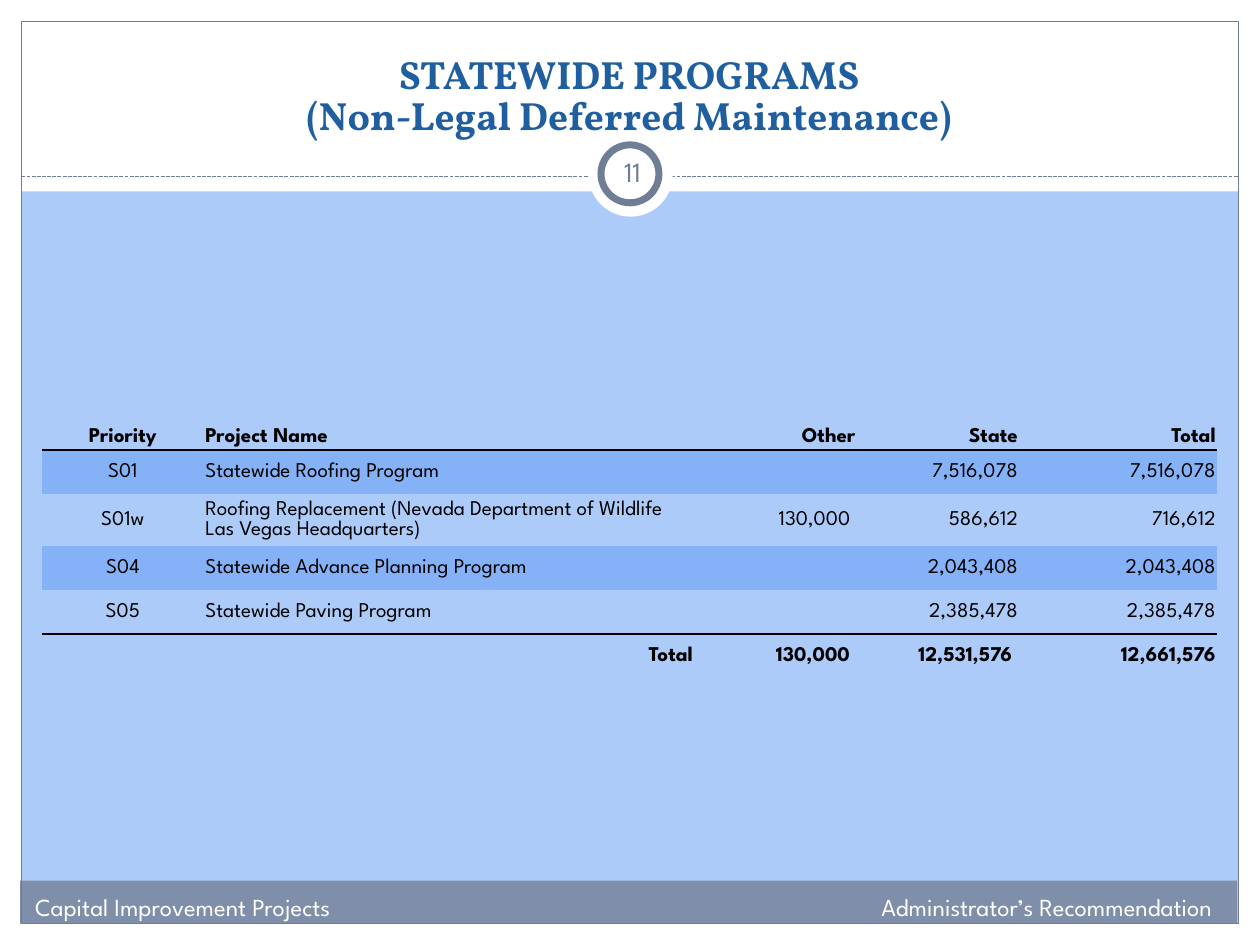
from dataclasses import dataclass
from typing import Optional

from lxml.etree import SubElement
from pptx import Presentation
from pptx.dml.color import RGBColor
from pptx.enum.dml import MSO_LINE
from pptx.enum.shapes import MSO_CONNECTOR, MSO_SHAPE
from pptx.enum.text import MSO_ANCHOR, PP_ALIGN
from pptx.oxml.ns import qn
from pptx.util import Inches, Pt

WHITE = RGBColor(0xFF, 0xFF, 0xFF)
BLACK = RGBColor(0x00, 0x00, 0x00)
SKY = RGBColor(0xAC, 0xCB, 0xF9)
BAND = RGBColor(0x85, 0xB2, 0xF6)
FOOTER = RGBColor(0x7F, 0x8F, 0xA9)
SLATE = RGBColor(0x70, 0x7E, 0x95)
TITLE_BLUE = RGBColor(0x1F, 0x5F, 0xA0)
BODY_FONT = "League Spartan"
NO_STYLE = "{2D5ABB26-0587-4C30-8999-92F81FD0307C}"
LEFT, CENTER, RIGHT = PP_ALIGN.LEFT, PP_ALIGN.CENTER, PP_ALIGN.RIGHT


@dataclass(frozen=True)
class Panel:
    left: float
    top: float
    width: float
    height: float
    fill: Optional[RGBColor] = WHITE
    line_width: float = 0
    kind: MSO_SHAPE = MSO_SHAPE.RECTANGLE


@dataclass(frozen=True)
class Label:
    text: str
    left: float
    top: float
    width: float
    height: float
    size: float
    color: RGBColor
    align: PP_ALIGN = CENTER
    anchor: MSO_ANCHOR = MSO_ANCHOR.TOP
    margins: tuple = (0.1, 0.05, 0.1, 0.05)
    font: str = BODY_FONT
    bold: bool = False
    spacing: float = 1.0


PANELS = [
    Panel(0, 7.33, 10, 0.17),
    Panel(0, 0, 10, 1.52),
    Panel(0, 0, 0.17, 7.5),
    Panel(9.83, 0, 0.17, 7.5),
    Panel(0.16, 6.99, 9.66, 0.34, FOOTER),
    Panel(0.17, 0.17, 9.66, 7.16, None, 0.75),
]
BADGE = [
    Panel(4.67, 1.05, 0.67, 0.67, kind=MSO_SHAPE.OVAL),
    Panel(4.77, 1.15, 0.46, 0.46, line_width=4, kind=MSO_SHAPE.OVAL),
]
LABELS = [
    Label("STATEWIDE PROGRAMS\v(Non-Legal Deferred Maintenance)", 0.33, 0.27, 9.33, 0.83,
          22.5, TITLE_BLUE, anchor=MSO_ANCHOR.BOTTOM, margins=(0.1, 0, 0.1, 0),
          font="Vollkorn", bold=True, spacing=0.87),
    Label("11", 4.77, 1.12, 0.5, 0.48, 16, SLATE, anchor=MSO_ANCHOR.MIDDLE,
          margins=(0.05, 0.05, 0.05, 0.05)),
    Label("Capital Improvement Projects", -0.17, 7.03, 6.33, 0.34, 14, WHITE, LEFT,
          margins=(0.45, 0.05, 0.1, 0.05)),
    Label("Administrator’s Recommendation", 3.39, 7.03, 6.33, 0.34, 14, WHITE, RIGHT),
]
COLUMN_WIDTHS = [1.29] + [0.65] * 4 + [1.29] * 3 + [1.57]
ROW_HEIGHTS = [0.2, 0.35, 0.41, 0.35, 0.35, 0.35]
FILLED_COLUMNS = [0, 1, 6, 7, 8]
ALIGNMENTS = {0: CENTER, 1: LEFT}
ROWS = [
    ("Priority", "Project Name", "Other", "State", "Total"),
    ("S01", "Statewide Roofing Program", "", "7,516,078", "7,516,078"),
    ("S01w", "Roofing Replacement (Nevada Department of Wildlife Las Vegas Headquarters)",
     "130,000 ", "586,612", "716,612"),
    ("S04", "Statewide Advance Planning Program", "", "2,043,408", "2,043,408"),
    ("S05", "Statewide Paving Program", "", "2,385,478", "2,385,478"),
    ("", "Total", "130,000 ", "12,531,576 ", "12,661,576"),
]
HEADER_ROW, LAST_PROJECT_ROW, TOTAL_ROW = 0, 4, 5
BANDED_ROWS = (1, 3)


def apply_format(target, values: dict) -> None:
    for name, value in values.items():
        setattr(target, name, value)


def set_margins(target, margins: tuple) -> None:
    sides = ("margin_left", "margin_top", "margin_right", "margin_bottom")
    apply_format(target, dict(zip(sides, map(Inches, margins))))


def write_text(frame, text: str, align: PP_ALIGN, spacing: float, font: dict,
               color: RGBColor) -> None:
    paragraph = frame.paragraphs[0]
    paragraph.text = text
    apply_format(paragraph, {"alignment": align, "line_spacing": spacing})
    for run in paragraph.runs:
        apply_format(run.font, font)
        run.font.color.rgb = color


def add_panel(slide, panel: Panel) -> None:
    box = map(Inches, (panel.left, panel.top, panel.width, panel.height))
    shape = slide.shapes.add_shape(panel.kind, *box)
    shape.shadow.inherit = False
    if panel.fill is None:
        shape.fill.background()
    else:
        shape.fill.solid()
        shape.fill.fore_color.rgb = panel.fill
    if panel.line_width:
        shape.line.color.rgb = SLATE
        shape.line.width = Pt(panel.line_width)
    else:
        shape.line.fill.background()


def add_divider(slide) -> None:
    connector = slide.shapes.add_connector(
        MSO_CONNECTOR.STRAIGHT, Inches(0.17), Inches(1.4), Inches(9.83), Inches(1.4))
    connector.line.color.rgb = SLATE
    apply_format(connector.line, {"width": Pt(0.75), "dash_style": MSO_LINE.SQUARE_DOT})
    SubElement(connector._element.spPr, qn("a:effectLst"))


def add_label(slide, label: Label) -> None:
    box = map(Inches, (label.left, label.top, label.width, label.height))
    frame = slide.shapes.add_textbox(*box).text_frame
    apply_format(frame, {"word_wrap": True, "vertical_anchor": label.anchor})
    set_margins(frame, label.margins)
    font = {"name": label.font, "size": Pt(label.size), "bold": label.bold}
    write_text(frame, label.text, label.align, label.spacing, font, label.color)


def add_bottom_border(cell) -> None:
    properties = cell._tc.get_or_add_tcPr()
    border = properties.makeelement(qn("a:lnB"), {"w": str(Pt(1))})
    SubElement(SubElement(border, qn("a:solidFill")), qn("a:srgbClr"), val=str(BLACK))
    properties.insert(0, border)


def add_project_table(slide) -> None:
    frame = slide.shapes.add_table(
        len(ROWS), len(COLUMN_WIDTHS), Inches(0.33), Inches(3.36),
        Inches(sum(COLUMN_WIDTHS)), Inches(sum(ROW_HEIGHTS)))
    table = frame.table
    table._tbl.tblPr.find(qn("a:tableStyleId")).text = NO_STYLE
    apply_format(table, {"first_row": False, "horz_banding": False})
    for column, width in zip(table.columns, COLUMN_WIDTHS):
        column.width = Inches(width)
    for index, values in enumerate(ROWS):
        table.rows[index].height = Inches(ROW_HEIGHTS[index])
        for cell in table.rows[index].cells:
            apply_format(cell, {"vertical_anchor": MSO_ANCHOR.MIDDLE})
            set_margins(cell, (0.01, 0.01, 0.01, 0))
            if index in BANDED_ROWS:
                cell.fill.solid()
                cell.fill.fore_color.rgb = BAND
            else:
                cell.fill.background()
            if index in (HEADER_ROW, LAST_PROJECT_ROW):
                add_bottom_border(cell)
        if index != TOTAL_ROW:
            table.cell(index, 1).merge(table.cell(index, 5))
        font = {"name": BODY_FONT, "size": Pt(12), "bold": index in (HEADER_ROW, TOTAL_ROW)}
        for column, text in zip(FILLED_COLUMNS, values):
            if index == TOTAL_ROW and column == 1:
                column = 5
            align = ALIGNMENTS.get(column, RIGHT)
            write_text(table.cell(index, column).text_frame, text, align, 1.0, font, BLACK)


def main() -> None:
    """Build the statewide programs slide."""
    presentation = Presentation()
    apply_format(presentation, {"slide_width": Inches(10), "slide_height": Inches(7.5)})
    slide = presentation.slides.add_slide(presentation.slide_layouts[6])
    slide.background.fill.solid()
    slide.background.fill.fore_color.rgb = SKY
    for panel in PANELS:
        add_panel(slide, panel)
    add_divider(slide)
    for panel in BADGE:
        add_panel(slide, panel)
    for label in LABELS:
        add_label(slide, label)
    add_project_table(slide)
    presentation.save("out.pptx")


if __name__ == "__main__":
    main()
